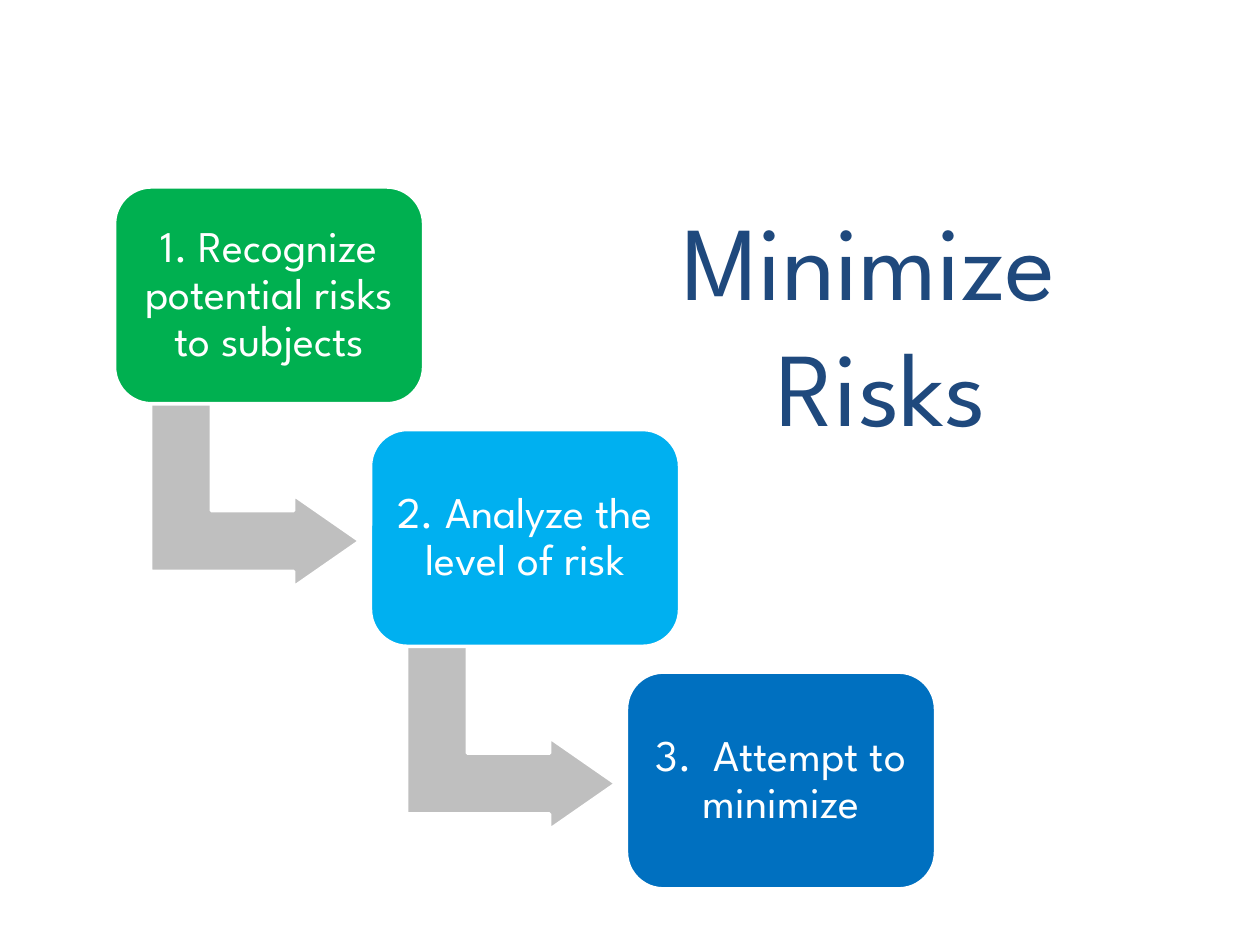
"""Build the Minimize Risks slide: three descending steps joined by bent arrows."""
from pptx import Presentation
from pptx.dml.color import RGBColor
from pptx.enum.shapes import MSO_SHAPE
from pptx.enum.text import MSO_ANCHOR, PP_ALIGN
from pptx.util import Cm, Pt

ROUNDED = MSO_SHAPE.ROUNDED_RECTANGLE
BENT_ARROW = MSO_SHAPE.BENT_UP_ARROW
MIDDLE = MSO_ANCHOR.MIDDLE
CENTER = PP_ALIGN.CENTER

FONT = "League Spartan"
LEFT, TOP = 2.31, 3.77
STEP_X, STEP_Y = 5.16, 4.89
BOX_WIDTH, BOX_HEIGHT = 6.23, 4.37
STEPS = [
    ("1. Recognize potential risks to subjects", "00B050"),
    ("2. Analyze the level of risk", "00B0F0"),
    ("3.  Attempt to minimize", "0070C0"),
]
FRAME_FORMAT = {
    "word_wrap": True,
    "vertical_anchor": MIDDLE,
    "margin_left": Cm(0.25),
    "margin_right": Cm(0.25),
    "margin_top": Cm(0.25),
    "margin_bottom": Cm(0.25),
}


def add_block(kind, left, top, width, height, fill, adjustments):
    block = page.shapes.add_shape(kind, Cm(left), Cm(top), Cm(width), Cm(height))
    block.shadow.inherit = False
    block.fill.solid()
    block.fill.fore_color.rgb = RGBColor.from_string(fill)
    block.line.color.rgb = RGBColor.from_string("FFFFFF")
    block.line.width = Pt(2)
    for index, value in enumerate(adjustments):
        block.adjustments[index] = value
    return block


def write(para, text, size, color):
    para.alignment = CENTER
    span = para.add_run()
    span.text = text
    for name, value in {"name": FONT, "size": Pt(size)}.items():
        setattr(span.font, name, value)
    span.font.color.rgb = RGBColor.from_string(color)


deck = Presentation()
deck.slide_width, deck.slide_height = Cm(25.4), Cm(19.05)
page = deck.slides.add_slide(deck.slide_layouts[6])

title = page.shapes.add_textbox(Cm(11.85), Cm(3.81), Cm(11.85), Cm(6.35)).text_frame
title.word_wrap = True
write(title.paragraphs[0], "Minimize ", 60, "1F497D")
write(title.add_paragraph(), "Risks", 60, "1F497D")

for number, (text, color) in enumerate(STEPS):
    left, top = LEFT + number * STEP_X, TOP + number * STEP_Y
    if number < len(STEPS) - 1:
        arrow = add_block(BENT_ARROW, left + 0.98, top + 4.1, 3.71, 4.22,
                          "BFBFBF", [0.33, 0.25, 0.36])
        arrow.rotation = 90
    box = add_block(ROUNDED, left, top, BOX_WIDTH, BOX_HEIGHT, color, [0.17])
    for name, value in FRAME_FORMAT.items():
        setattr(box.text_frame, name, value)
    para = box.text_frame.paragraphs[0]
    para.line_spacing = 0.9
    write(para, text, 25, "FFFFFF")

deck.save("out.pptx")
